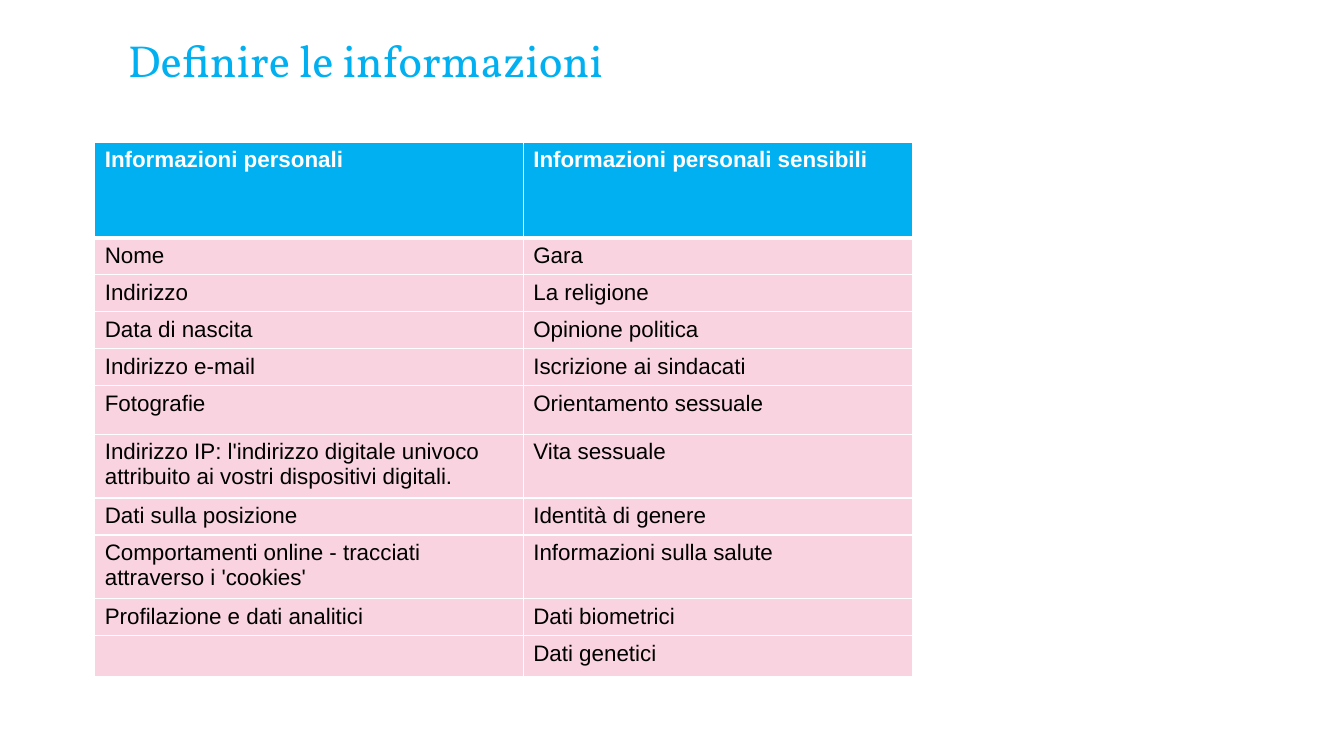
from dataclasses import dataclass

from lxml.etree import SubElement
from pptx import Presentation
from pptx.dml.color import RGBColor
from pptx.enum.text import MSO_ANCHOR
from pptx.oxml.ns import qn
from pptx.slide import Slide
from pptx.table import _Cell
from pptx.text.text import _Paragraph
from pptx.util import Inches, Pt

COLORS = {"cyan": "00B0F0", "pink": "F9D3DF", "white": "FFFFFF", "black": "000000"}


@dataclass(frozen=True)
class TextStyle:
    font: str
    size: int
    color: str
    bold: bool = False


@dataclass(frozen=True)
class InformationRow:
    personal: str
    sensitive: str
    height: float = 0.34


TITLE_STYLE = TextStyle("Vollkorn", 32, "cyan")
HEADER_STYLE = TextStyle("Arial", 16, "white", True)
BODY_STYLE = TextStyle("Arial", 16, "black")

COLUMN_WIDTHS = (4.25, 3.86)
ROWS = (
    InformationRow("Informazioni personali", "Informazioni personali sensibili", 0.95),
    InformationRow("Nome", "Gara"),
    InformationRow("Indirizzo", "La religione"),
    InformationRow("Data di nascita", "Opinione politica"),
    InformationRow("Indirizzo e-mail", "Iscrizione ai sindacati"),
    InformationRow("Fotografie", "Orientamento sessuale", 0.48),
    InformationRow(
        "Indirizzo IP: l'indirizzo digitale univoco attribuito ai vostri dispositivi digitali.",
        "Vita sessuale",
        0.59,
    ),
    InformationRow("Dati sulla posizione", "Identità di genere"),
    InformationRow(
        "Comportamenti online - tracciati attraverso i 'cookies'",
        "Informazioni sulla salute",
        0.59,
    ),
    InformationRow("Profilazione e dati analitici", "Dati biometrici"),
    InformationRow("", "Dati genetici", 0.38),
)


def add_run(paragraph: _Paragraph, text: str, style: TextStyle) -> None:
    run = paragraph.add_run()
    run.text = text
    run.font.name = style.font
    run.font.size = Pt(style.size)
    run.font.bold = style.bold
    run.font.color.rgb = RGBColor.from_string(COLORS[style.color])


def add_title(slide: Slide) -> None:
    title = slide.shapes.add_textbox(Inches(1.17), Inches(0), Inches(11), Inches(0.91))
    frame = title.text_frame
    frame.word_wrap = True
    frame.vertical_anchor = MSO_ANCHOR.BOTTOM
    paragraph = frame.paragraphs[0]
    paragraph.line_spacing = 0.9
    add_run(paragraph, "Definire le informazioni", TITLE_STYLE)


def format_cell(cell: _Cell, fill: str, top: float, bottom: float) -> None:
    cell.fill.solid()
    cell.fill.fore_color.rgb = RGBColor.from_string(COLORS[fill])
    properties = cell._tc.get_or_add_tcPr()
    edges = (("a:lnL", 1), ("a:lnR", 1), ("a:lnT", top), ("a:lnB", bottom))
    for position, (tag, width) in enumerate(edges):
        line = SubElement(properties, qn(tag), w=str(Pt(width)))
        solid_fill = SubElement(line, qn("a:solidFill"))
        SubElement(solid_fill, qn("a:srgbClr"), val=COLORS["white"])
        properties.insert(position, line)


def add_information_table(slide: Slide) -> None:
    width = sum(COLUMN_WIDTHS)
    height = sum(row.height for row in ROWS)
    table = slide.shapes.add_table(
        len(ROWS), len(COLUMN_WIDTHS), Inches(0.94), Inches(1.41), Inches(width), Inches(height)
    ).table
    for column, column_width in zip(table.columns, COLUMN_WIDTHS):
        column.width = Inches(column_width)
    for index, row in enumerate(ROWS):
        table.rows[index].height = Inches(row.height)
        is_header = index == 0
        for column_index, text in enumerate((row.personal, row.sensitive)):
            cell = table.cell(index, column_index)
            format_cell(
                cell,
                "cyan" if is_header else "pink",
                top=3 if index == 1 else 1,
                bottom=3 if is_header else 1,
            )
            if text:
                style = HEADER_STYLE if is_header else BODY_STYLE
                add_run(cell.text_frame.paragraphs[0], text, style)


def main() -> None:
    presentation = Presentation()
    presentation.slide_width = Inches(13.33)
    presentation.slide_height = Inches(7.5)
    slide = presentation.slides.add_slide(presentation.slide_layouts[6])
    add_title(slide)
    add_information_table(slide)
    presentation.save("out.pptx")


if __name__ == "__main__":
    main()
